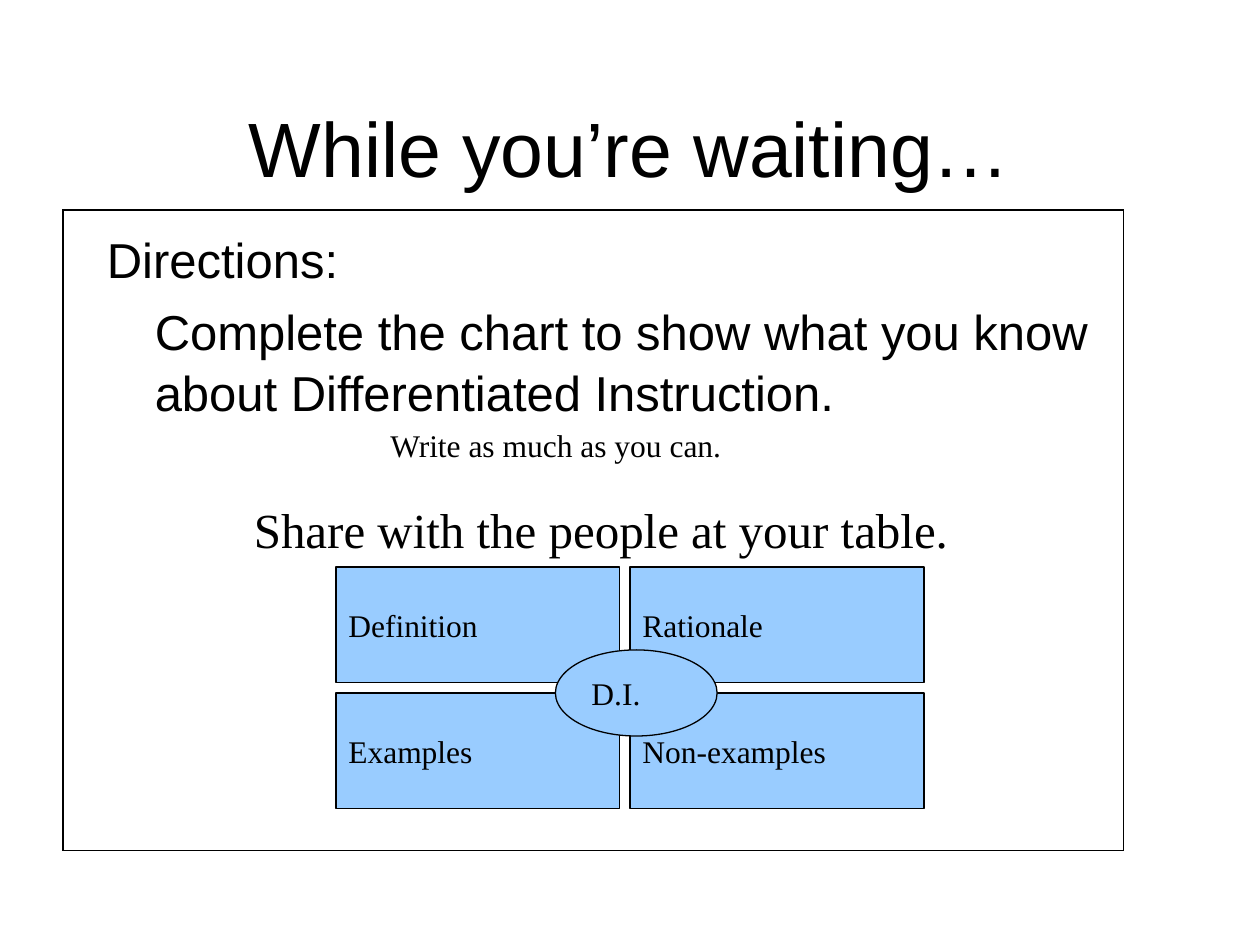
from lxml import etree
from pptx import Presentation
from pptx.dml.color import RGBColor
from pptx.enum.shapes import MSO_SHAPE
from pptx.enum.text import MSO_ANCHOR, PP_ALIGN
from pptx.oxml.ns import qn
from pptx.util import Inches, Pt

RECTANGLE, OVAL = MSO_SHAPE.RECTANGLE, MSO_SHAPE.OVAL
TOP, MIDDLE = MSO_ANCHOR.TOP, MSO_ANCHOR.MIDDLE
LEFT, CENTER = PP_ALIGN.LEFT, PP_ALIGN.CENTER

BLACK = RGBColor(0x00, 0x00, 0x00)
SKY_BLUE = RGBColor(0x99, 0xCC, 0xFF)
SANS, SERIF = "Arial", "Times New Roman"
COLUMNS, ROWS = 120, 90


class SlideBuilder:
    """Places elements on a grid of 120 columns by 90 rows."""

    def __init__(self, presentation):
        self.column = presentation.slide_width / COLUMNS
        self.row = presentation.slide_height / ROWS
        self.slide = presentation.slides.add_slide(presentation.slide_layouts[6])

    def place(self, left, top, width, height):
        return (round(left * self.column), round(top * self.row),
                round(width * self.column), round(height * self.row))

    def fill_text(self, shape, lines, font, size, align=LEFT, anchor=TOP):
        frame = shape.text_frame
        frame.text = "\n".join(lines)
        frame.word_wrap = True
        frame.vertical_anchor = anchor
        for paragraph in frame.paragraphs:
            paragraph.alignment = align
            for run in paragraph.runs:
                run.font.name = font
                run.font.size = Pt(size)
                run.font.color.rgb = BLACK
        return frame

    def text(self, area, lines, font, size, **layout):
        box = self.slide.shapes.add_textbox(*self.place(*area))
        return self.fill_text(box, lines, font, size, **layout)

    def labelled_shape(self, kind, area, label):
        shape = self.slide.shapes.add_shape(kind, *self.place(*area))
        shape.shadow.inherit = False
        shape.fill.solid()
        shape.fill.fore_color.rgb = SKY_BLUE
        shape.line.color.rgb = BLACK
        shape.line.width = Pt(0.75)
        self.fill_text(shape, [label], SERIF, 18, anchor=MIDDLE)

    def framed_table(self, area):
        """Add a one-cell table with a thin border and no fill."""
        table = self.slide.shapes.add_table(1, 1, *self.place(*area)).table
        table.first_row = table.horz_banding = False
        cell = table.cell(0, 0)
        properties = cell._tc.get_or_add_tcPr()
        for side in ("a:lnL", "a:lnR", "a:lnT", "a:lnB"):
            border = etree.SubElement(properties, qn(side), w=str(Pt(1)))
            fill = etree.SubElement(border, qn("a:solidFill"))
            etree.SubElement(fill, qn("a:srgbClr"), val=str(BLACK))
        cell.fill.background()


def main():
    presentation = Presentation()
    presentation.slide_width = Inches(10)
    presentation.slide_height = Inches(7.5)
    builder = SlideBuilder(presentation)

    builder.text((9, 8, 102, 12), ["While you’re waiting…"], SANS, 44,
                 align=CENTER, anchor=MIDDLE)
    directions = builder.text((9, 21, 105, 42), [
        "Directions:",
        "Complete the chart to show what you know about Differentiated Instruction.",
    ], SANS, 28)
    for paragraph in directions.paragraphs:
        paragraph.space_before = Pt(5.6)
        paragraph.line_spacing = 1.05
    directions.paragraphs[1]._p.get_or_add_pPr().set("marL", str(Inches(0.38)))

    builder.framed_table((6, 20, 101, 61))
    builder.text((23, 47, 71.3, 6.8), ["Share with the people at your table."], SERIF, 28)

    chart_columns = ((32, 27), (60, 28))
    chart_labels = (("Definition", "Rationale"), ("Examples", "Non-examples"))
    for row, labels in enumerate(chart_labels):
        for (left, width), label in zip(chart_columns, labels):
            builder.labelled_shape(RECTANGLE, (left, 54 + 12 * row, width, 11), label)
    builder.labelled_shape(OVAL, (52.9, 61.9, 15.4, 8.2), "D.I.")
    builder.text((36, 40, 56.6, 7.3), ["Write as much as you can."], SERIF, 18)

    presentation.save("out.pptx")


if __name__ == "__main__":
    main()
